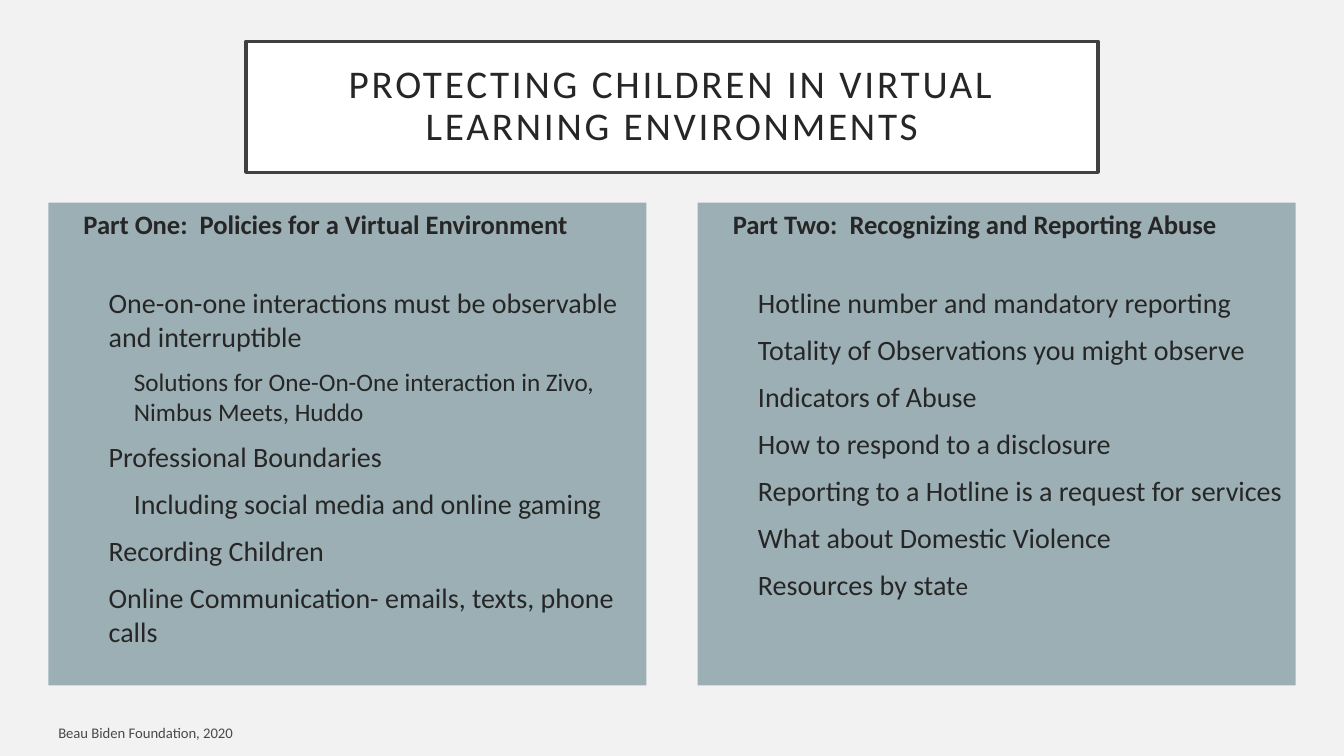
from pptx import Presentation
from pptx.dml.color import RGBColor
from pptx.enum.shapes import MSO_SHAPE
from pptx.enum.text import MSO_ANCHOR, PP_ALIGN
from pptx.util import Inches, Pt

RECT = MSO_SHAPE.RECTANGLE
TOP, MIDDLE = MSO_ANCHOR.TOP, MSO_ANCHOR.MIDDLE
LEFT, CENTER = PP_ALIGN.LEFT, PP_ALIGN.CENTER
PAPER = RGBColor(0xF2, 0xF2, 0xF2)
WHITE = RGBColor(0xFF, 0xFF, 0xFF)
FRAME = RGBColor(0x40, 0x40, 0x40)
SLATE = RGBColor(0x9B, 0xAF, 0xB5)
INK = RGBColor(0x26, 0x26, 0x26)
GREY = RGBColor(0x49, 0x49, 0x49)

WIDE, HIGH = Inches(13.33), Inches(7.5)
EDGE, SPAN = 3.6, 44.49
STEP = 100 - 2 * EDGE - SPAN
INDENT = 0.25
GAP, BREAK = 9.5, 33

PARTS = [
    ("Part One:  Policies for a Virtual Environment", [
        (2, [("One-on-one interactions must be observable and interruptible", 20)]),
        (3, [("Solutions for One-On-One interaction in Zivo, Nimbus Meets, Huddo", 18)]),
        (2, [("Professional Boundaries", 20)]),
        (3, [("Including social media and online gaming", 20)]),
        (2, [("Recording Children", 20)]),
        (2, [("Online Communication- emails, texts, phone calls", 20)]),
    ]),
    ("Part Two:  Recognizing and Reporting Abuse", [
        (2, [("Hotline number and mandatory reporting", 20)]),
        (2, [("Totality of Observations you might observe", 20)]),
        (2, [("Indicators of Abuse", 20)]),
        (2, [("How to respond to a disclosure", 20)]),
        (2, [("Reporting to a Hotline is a request for services", 20)]),
        (2, [("What about Domestic Violence", 20)]),
        (2, [("Resources by stat", 20), ("e", 18)]),
    ]),
]


def place(box):
    x, y, w, h = box
    return [round(v * side / 100) for v, side in ((x, WIDE), (y, HIGH), (w, WIDE), (h, HIGH))]


def apply(target, form):
    for name, value in form.items():
        setattr(target, name, value)


def write(para, text, size, color=INK, bold=False):
    run = para.add_run()
    run.text = text
    apply(run.font, {"name": "Calibri", "size": Pt(size), "bold": bold})
    run.font.color.rgb = color
    return run


def block(slide, box, fill, anchor):
    shape = slide.shapes.add_shape(RECT, *place(box))
    shape.shadow.inherit = False
    shape.fill.solid()
    shape.fill.fore_color.rgb = fill
    shape.line.fill.background()
    apply(shape.text_frame, {"word_wrap": True, "vertical_anchor": anchor})
    return shape


def title(slide, box, text):
    shape = block(slide, box, WHITE, MIDDLE)
    shape.line.color.rgb = FRAME
    shape.line.width = Pt(2.5)
    frame = shape.text_frame
    sides = ("left", "top", "right", "bottom")
    apply(frame, {f"margin_{side}": Inches(0.2) for side in sides})
    para = frame.paragraphs[0]
    apply(para, {"alignment": CENTER, "line_spacing": 0.9})
    run = write(para, text, 28)
    run.font._element.set("spc", "200")


def panel(slide, box, head, items):
    frame = block(slide, box, SLATE, TOP).text_frame
    rows = [(1, [(head, 19)])] + items
    for i, (level, runs) in enumerate(rows):
        para = frame.add_paragraph() if i else frame.paragraphs[0]
        para.alignment = LEFT
        if i:
            para.space_before = Pt(BREAK if i == 1 else GAP)
        para._p.get_or_add_pPr().set("marL", str(Inches(level * INDENT)))
        for text, size in runs:
            write(para, text, size, bold=not i)


def footer(slide, box, text):
    frame = slide.shapes.add_textbox(*place(box)).text_frame
    apply(frame, {"word_wrap": True, "vertical_anchor": MIDDLE})
    write(frame.paragraphs[0], text, 10.5, GREY)


def main():
    deck = Presentation()
    apply(deck, {"slide_width": WIDE, "slide_height": HIGH})
    slide = deck.slides.add_slide(deck.slide_layouts[6])
    slide.background.fill.solid()
    slide.background.fill.fore_color.rgb = PAPER
    title(slide, (18.3, 5.47, 63.4, 17.33),
          "PROTECTING CHILDREN IN VIRTUAL LEARNING ENVIRONMENTS")
    for i, (head, items) in enumerate(PARTS):
        panel(slide, (EDGE + i * STEP, 26.8, SPAN, 63.87), head, items)
    footer(slide, (EDGE, 94.53, 48.39, 4.67), "Beau Biden Foundation, 2020")
    deck.save("out.pptx")


if __name__ == "__main__":
    main()
